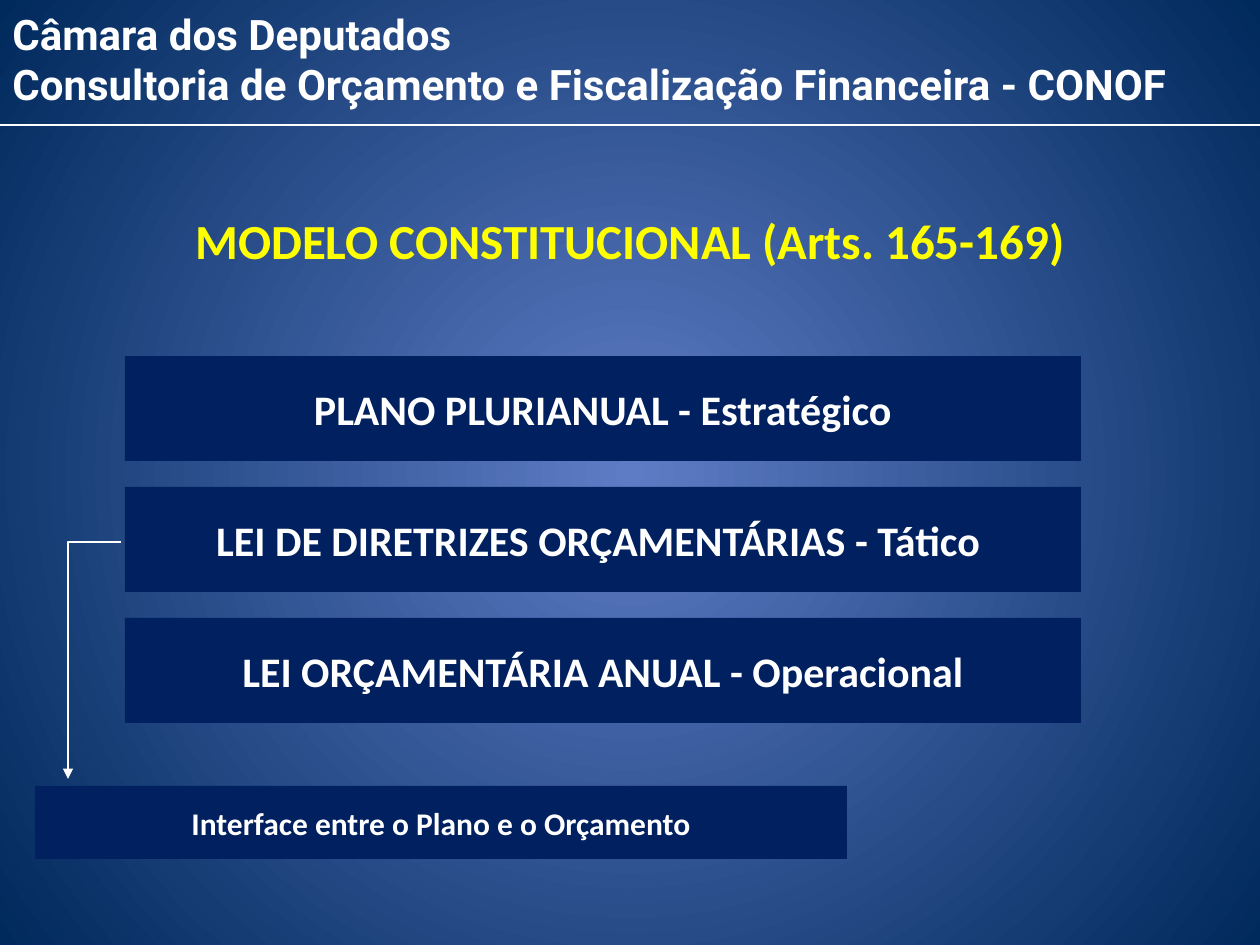
import pptx
import pptx.dml.color
import pptx.enum.shapes
import pptx.enum.text
import pptx.oxml.ns
import pptx.oxml.xmlchemy
import pptx.util

SCALE = 914400 / 126
WHITE, YELLOW, NAVY = "FFFFFF", "FFFF00", "002060"
ALIGN = pptx.enum.text.PP_ALIGN
ANCHOR = pptx.enum.text.MSO_ANCHOR
CONNECTOR = pptx.enum.shapes.MSO_CONNECTOR


def px(*lengths):
    """Turn pixel lengths into EMU."""
    return [pptx.util.Emu(round(length * SCALE)) for length in lengths]


def colour(value):
    """Turn a hex string into a colour."""
    return pptx.dml.color.RGBColor.from_string(value)


def add_element(parent, tag, **attributes):
    """Append an XML element with attributes to its parent."""
    element = pptx.oxml.xmlchemy.OxmlElement(tag)
    for name, value in attributes.items():
        element.set(name, value)
    parent.append(element)
    return element


def write(shape, text, size=24, font="Calibri", fill=WHITE, align=ALIGN.CENTER,
          anchor=ANCHOR.MIDDLE, wrap=True, before=0):
    """Write bold text into a shape, one paragraph per line."""
    frame = shape.text_frame
    frame.text = text
    frame.word_wrap = wrap
    frame.vertical_anchor = anchor
    for para in frame.paragraphs:
        para.alignment = align
        para.space_before = pptx.util.Pt(before)
        for span in para.runs:
            span.font.size = pptx.util.Pt(size)
            span.font.name = font
            span.font.bold = True
            span.font.color.rgb = colour(fill)


def add_line(page, kind, start, end, width):
    """Draw a white connector without shadow."""
    line = page.shapes.add_connector(kind, *px(*start, *end))
    line.line.color.rgb = colour(WHITE)
    line.line.width = pptx.util.Pt(width)
    add_element(line._element.spPr, "a:effectLst")
    return line


def paint_background(page):
    """Fill the page with a circular gradient from its centre."""
    fill = page.background.fill
    fill.gradient()
    for stop, value in zip(fill.gradient_stops, ("5E7CC5", "00295C")):
        stop.color.rgb = colour(value)
    gradient = page._element.find(".//" + pptx.oxml.ns.qn("a:gradFill"))
    gradient.remove(gradient.find(pptx.oxml.ns.qn("a:lin")))
    circle = add_element(gradient, "a:path", path="circle")
    add_element(circle, "a:fillToRect", **dict.fromkeys("ltrb", "50000"))


def add_header(page, left, top, width, height):
    """Place the two-line institution header and the rule under it."""
    box = page.shapes.add_textbox(*px(left, top, width, height))
    write(box, "Câmara dos Deputados\n"
               "Consultoria de Orçamento e Fiscalização Financeira - CONOF",
          font="Roboto", align=ALIGN.LEFT)
    rule = top + height + 9
    add_line(page, CONNECTOR.STRAIGHT, (left, rule), (left + width, rule), 1.5)


def add_title(page, left, top, width, height):
    """Place the yellow title at the top of the body area."""
    box = page.shapes.add_textbox(*px(left, top, width, height))
    write(box, "MODELO CONSTITUCIONAL (Arts. 165-169)", size=28, fill=YELLOW,
          anchor=ANCHOR.TOP, before=1)


def add_bar(page, text, left, top, width, height, size=24):
    """Place a navy bar with centred text."""
    bar = page.shapes.add_shape(pptx.enum.shapes.MSO_SHAPE.RECTANGLE,
                                *px(left, top, width, height))
    bar.shadow.inherit = False
    bar.fill.solid()
    bar.fill.fore_color.rgb = colour(NAVY)
    bar.line.fill.background()
    write(bar, text, size=size, wrap=False)


def add_levels(page, left, top, width, height, pitch):
    """Stack the three planning levels at an equal pitch."""
    levels = ("PLANO PLURIANUAL - Estratégico",
              "LEI DE DIRETRIZES ORÇAMENTÁRIAS - Tático ",
              "LEI ORÇAMENTÁRIA ANUAL - Operacional")
    for row, text in enumerate(levels):
        add_bar(page, text, left, top + row * pitch, width, height)


def add_elbow_arrow(page, left, top, width, height):
    """Draw an arrow that runs left from the top right, then down."""
    arrow = add_line(page, CONNECTOR.ELBOW, (left, top + height), (left + width, top), 0.75)
    properties = arrow._element.spPr
    properties.find(pptx.oxml.ns.qn("a:xfrm")).set("rot", "10800000")
    properties.find(pptx.oxml.ns.qn("a:prstGeom")).set("prst", "bentConnector2")
    add_element(properties.find(pptx.oxml.ns.qn("a:ln")), "a:tailEnd", type="triangle")


def build():
    """Build and save the deck."""
    deck = pptx.Presentation()
    deck.slide_width, deck.slide_height = px(1260, 945)
    page = deck.slides.add_slide(deck.slide_layouts[6])
    paint_background(page)
    add_title(page, 0, 204, 1260, 667)
    add_levels(page, 125, 356, 956, 105, 131)
    add_elbow_arrow(page, 68, 542, 53, 237)
    add_bar(page, "Interface entre o Plano e o Orçamento", 35, 786, 812, 73, size=18)
    add_header(page, 0, 1, 1260, 115)
    deck.save("out.pptx")


if __name__ == "__main__":
    build()
